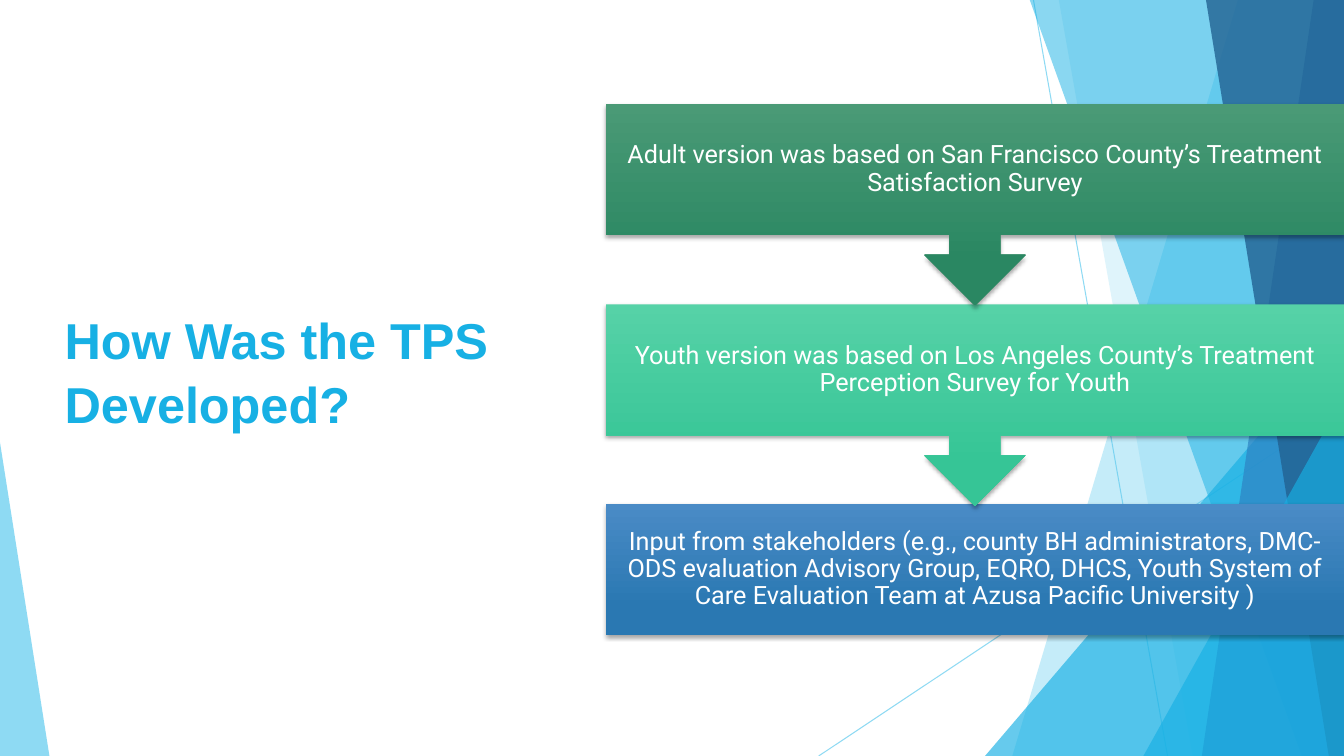
from lxml import etree
from pptx import Presentation
from pptx.dml.color import RGBColor
from pptx.enum.shapes import MSO_CONNECTOR, MSO_SHAPE
from pptx.enum.text import MSO_ANCHOR, PP_ALIGN
from pptx.oxml.ns import qn
from pptx.util import Pt

PX = 9144  # 100 px to the inch
WIDE, HIGH = 1333, 750
LINE = MSO_CONNECTOR.STRAIGHT
RECT, CALLOUT = MSO_SHAPE.RECTANGLE, MSO_SHAPE.DOWN_ARROW_CALLOUT
WEDGE = MSO_SHAPE.ISOSCELES_TRIANGLE
LEFT, CENTER, MIDDLE = PP_ALIGN.LEFT, PP_ALIGN.CENTER, MSO_ANCHOR.MIDDLE

WHITE = RGBColor(0xFF, 0xFF, 0xFF)
SKY = RGBColor(0x5F, 0xCB, 0xEF)
CYAN = RGBColor(0x17, 0xB0, 0xE4)
BLUE = RGBColor(0x2E, 0x83, 0xC3)
NAVY = RGBColor(0x22, 0x62, 0x92)
PINE = RGBColor(0x4A, 0x9A, 0x76), RGBColor(0x2A, 0x87, 0x62)
MINT = RGBColor(0x56, 0xD2, 0xA7), RGBColor(0x36, 0xC5, 0x96)
STEEL = RGBColor(0x4A, 0x8B, 0xC6), RGBColor(0x2A, 0x78, 0xB2)


def px(*nums):
    return [n * PX for n in nums]


def tint(fill, node, color, alpha):
    """Solid fill with an opacity in percent."""
    fill.solid()
    fill.fore_color.rgb = color
    rgb = next(node.iter(qn("a:srgbClr")))
    etree.SubElement(rgb, qn("a:alpha"), val=str(alpha * 1000))


deck = Presentation()
deck.slide_width, deck.slide_height = px(WIDE, HIGH)
slide = deck.slides.add_slide(deck.slide_layouts[5])
shapes = slide.shapes

# Thin lines behind the facets
for ends in [(1025, 0, 1158, HIGH), (WIDE, 403, 812, HIGH)]:
    line = shapes.add_connector(LINE, *px(*ends))
    line.line.width = Pt(0.75)
    tint(line.line.fill, line._element.spPr, SKY, 70)
    etree.SubElement(line._element.spPr, qn("a:effectLst"))

# Facets: bands give top and foot x, wedges give box and apex
facets = [
    ((1228, 1004), SKY, 36),
    ((1050, 1183), SKY, 20),
    ((977, 333, 356, 417, 1), CYAN, 66),
    ((1021, 1291), CYAN, 50),
    ((1303, 1192), BLUE, 70),
    ((1196, 1318), NAVY, 80),
    ((1134, 393, 199, 357, 1), CYAN, 66),
    ((0, 439, 49, 311, 0), SKY, 70),
]
for nums, color, alpha in facets:
    if len(nums) == 2:
        top, foot = nums
        pen = shapes.build_freeform(top, -1, scale=PX)
        pen.add_line_segments([(WIDE, -1), (WIDE, HIGH), (foot, HIGH)])
        facet = pen.convert_to_shape()
    else:
        facet = shapes.add_shape(WEDGE, *px(*nums[:4]))
        facet.adjustments[0] = nums[4]
    facet.shadow.inherit = False
    facet.line.fill.background()
    tint(facet.fill, facet._element.spPr, color, alpha)

# Title, in front of the facets
title = shapes.title
shapes._spTree.append(title._element)
title.left, title.top, title.width, title.height = px(54, 295, 492, 144)
frame = title.text_frame
frame.text = "How Was the TPS Developed?"
frame.word_wrap = True
frame.vertical_anchor = MIDDLE
para = frame.paragraphs[0]
para.alignment = LEFT
para.line_spacing = 1.05
font = para.runs[0].font
font.name, font.size, font.bold = "Arial", Pt(36), True
font.color.rgb = CYAN

# Steps, last one first so that each arrow lies over the next box
steps = [
    (RECT, 500, 130, STEEL,
     "Input from stakeholders (e.g., county BH administrators, DMC-ODS "
     "evaluation Advisory Group, EQRO, DHCS, Youth System of Care "
     "Evaluation Team at Azusa Pacific University )"),
    (CALLOUT, 302, 200, MINT,
     "Youth version was based on Los Angeles County’s Treatment "
     "Perception Survey for Youth"),
    (CALLOUT, 103, 200, PINE,
     "Adult version was based on San Francisco County’s Treatment "
     "Satisfaction Survey"),
]
for kind, top, high, shades, text in steps:
    step = shapes.add_shape(kind, *px(601, top, 732, high))
    step.line.fill.background()
    step.fill.gradient()
    step.fill.gradient_angle = 270
    for stop, shade, spot in zip(step.fill.gradient_stops, shades, (0, 0.78)):
        stop.color.rgb, stop.position = shade, spot

    # Soft shadow below
    step.shadow.inherit = False
    glow = step._element.spPr.find(qn("a:effectLst"))
    drop = etree.SubElement(glow, qn("a:outerShdw"), blurRad=str(Pt(3)),
                            dist=str(Pt(2)), dir="5400000", rotWithShape="0")
    black = etree.SubElement(drop, qn("a:srgbClr"), val="000000")
    etree.SubElement(black, qn("a:alpha"), val="35000")

    frame = step.text_frame
    frame.text = text
    frame.word_wrap = True
    frame.vertical_anchor = MIDDLE
    frame.margin_left = frame.margin_right = 14 * PX
    frame.margin_top = frame.margin_bottom = 14 * PX
    para = frame.paragraphs[0]
    para.alignment = CENTER
    para.line_spacing = 0.9
    font = para.runs[0].font
    font.name, font.size = "Roboto", Pt(18)
    font.color.rgb = WHITE

deck.save("out.pptx")
